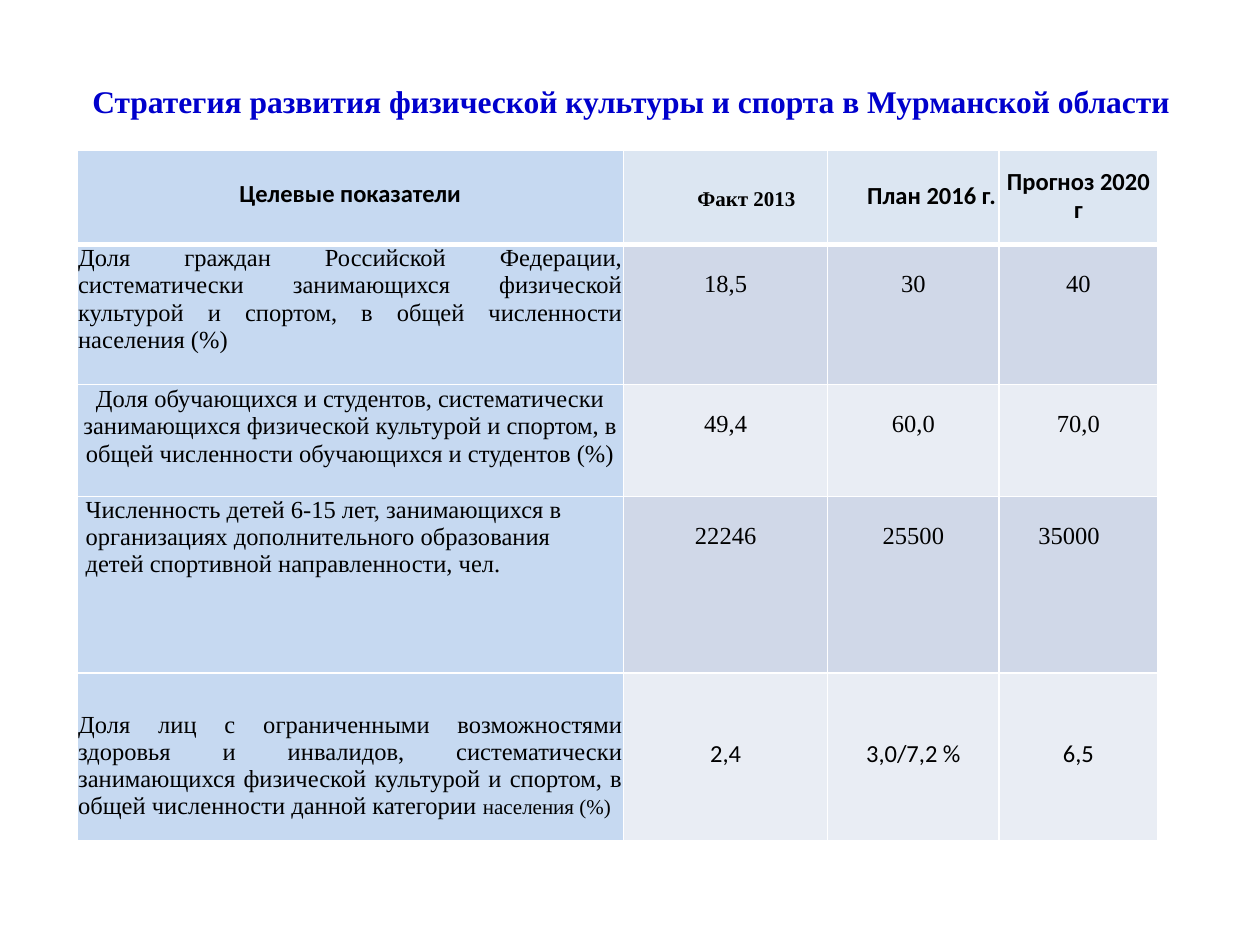
from dataclasses import dataclass

from lxml.etree import SubElement
from pptx import Presentation
from pptx.dml.color import RGBColor
from pptx.enum.text import MSO_ANCHOR, PP_ALIGN
from pptx.oxml.ns import qn
from pptx.util import Inches, Pt

BLACK = RGBColor(0x00, 0x00, 0x00)
WHITE = RGBColor(0xFF, 0xFF, 0xFF)
BLUE = RGBColor(0x00, 0x00, 0xCC)
LABEL = RGBColor(0xC6, 0xD9, 0xF1)
HEAD = RGBColor(0xDC, 0xE6, 0xF2)
DARK = RGBColor(0xD0, 0xD8, 0xE8)
LIGHT = RGBColor(0xE9, 0xED, 0xF4)

SERIF, SANS = "Times New Roman", "Calibri"
TOP, MIDDLE, BOTTOM = MSO_ANCHOR.TOP, MSO_ANCHOR.MIDDLE, MSO_ANCHOR.BOTTOM
LEFT, CENTER, JUST = PP_ALIGN.LEFT, PP_ALIGN.CENTER, PP_ALIGN.JUSTIFY

COLS = [4.34, 1.62, 1.36, 1.26]
ROWS = [0.75, 1.11, 0.89, 1.4, 1.33]
TIGHT = (0.01, 0, 0.01, 0)
WIDE = (0.07, 0, 0.07, 0)
DROP = (0.07, 0.21, 0.07, 0)


@dataclass
class Item:
    text: str
    pad: tuple = TIGHT  # left, top, right, bottom
    anchor: MSO_ANCHOR = TOP
    align: PP_ALIGN = CENTER
    font: str = SERIF
    size: float = 14
    bold: bool = False
    line: float | None = None
    tail: str = ""  # closing words in smaller type


def header(text: str, **kw) -> Item:
    return Item(text, **{"anchor": MIDDLE, "font": SANS, "bold": True,
                         "line": 16, **kw})


def value(text: str, pad: tuple = DROP) -> Item:
    return Item(text, pad)


def share(text: str) -> Item:
    return Item(text, anchor=MIDDLE, font=SANS, line=14)


GRID = [
    [header("Целевые показатели", line=13),
     header("Факт 2013", pad=(0.34, 0, 0.01, 0), font=SERIF, size=12, line=16.2),
     header("План 2016 г.", pad=(0.3, 0, 0.01, 0)),
     header("Прогноз 2020 г")],
    [Item("Доля граждан Российской Федерации, систематически занимающихся "
          "физической культурой и спортом, в общей численности населения (%)",
          align=JUST, line=15.6),
     value("18,5"), value("30"), value("40")],
    [Item("Доля обучающихся и студентов, систематически занимающихся "
          "физической культурой и спортом, в общей численности обучающихся "
          "и студентов (%)", line=16),
     value("49,4"), value("60,0"), value("70,0")],
    [Item("Численность детей 6-15 лет, занимающихся в организациях "
          "дополнительного образования детей спортивной направленности, чел.",
          WIDE, align=LEFT),
     value("22246"), value("25500"), value("35000", (0.07, 0.21, 0.22, 0))],
    [Item("Доля лиц с ограниченными возможностями здоровья и инвалидов, "
          "систематически занимающихся физической культурой и спортом, "
          "в общей численности данной категории ", (0.01, 0, 0.01, 0.16),
          BOTTOM, JUST, tail="населения (%)"),
     share("2,4"), share("3,0/7,2 %"), share("6,5")],
]


def write(para, text: str, *, font=SERIF, size=14, bold=False, color=BLACK,
          align=CENTER, line=None) -> None:
    run = para.add_run()
    run.text = text
    run.font.name, run.font.size, run.font.bold = font, Pt(size), bold
    run.font.color.rgb = color
    para.alignment = align
    if line:
        para.line_spacing = Pt(line)


def edge(cell, side: str, width: float) -> None:
    line = SubElement(cell._tc.get_or_add_tcPr(), qn(f"a:ln{side}"),
                      w=str(Pt(width)))
    fill = SubElement(line, qn("a:solidFill"))
    SubElement(fill, qn("a:srgbClr"), val=str(WHITE))


def draw(cell, item: Item, row: int, col: int) -> None:
    """Fill one table cell with its borders, colour and text."""
    widths = {"L": 1, "R": 1, "T": 3 if row == 1 else 1, "B": 3 if row == 0 else 1}
    for side, width in widths.items():
        edge(cell, side, width)
    cell.fill.solid()
    band = HEAD if row == 0 else DARK if row % 2 else LIGHT
    cell.fill.fore_color.rgb = LABEL if col == 0 else band
    (cell.margin_left, cell.margin_top,
     cell.margin_right, cell.margin_bottom) = map(Inches, item.pad)
    cell.vertical_anchor = item.anchor
    para = cell.text_frame.paragraphs[0]
    form = dict(font=item.font, bold=item.bold, align=item.align, line=item.line)
    write(para, item.text, size=item.size, **form)
    if item.tail:
        write(para, item.tail, size=12, **form)


def main() -> None:
    deck = Presentation()
    deck.slide_width, deck.slide_height = Inches(10), Inches(7.5)
    slide = deck.slides.add_slide(deck.slide_layouts[5])

    title = slide.shapes.title
    title.left, title.top = Inches(0.51), Inches(0.6)
    title.width, title.height = Inches(9), Inches(0.4)
    title.text_frame.vertical_anchor = MIDDLE
    write(title.text_frame.paragraphs[0],
          "Стратегия развития физической культуры и спорта в Мурманской области",
          size=18, bold=True, color=BLUE)

    table = slide.shapes.add_table(
        len(ROWS), len(COLS), Inches(0.61), Inches(1.19),
        Inches(sum(COLS)), Inches(sum(ROWS))).table
    for col, width in zip(table.columns, COLS):
        col.width = Inches(width)
    for row, height in zip(table.rows, ROWS):
        row.height = Inches(height)
    for r, items in enumerate(GRID):
        for c, item in enumerate(items):
            draw(table.cell(r, c), item, r, c)

    deck.save("out.pptx")


if __name__ == "__main__":
    main()
